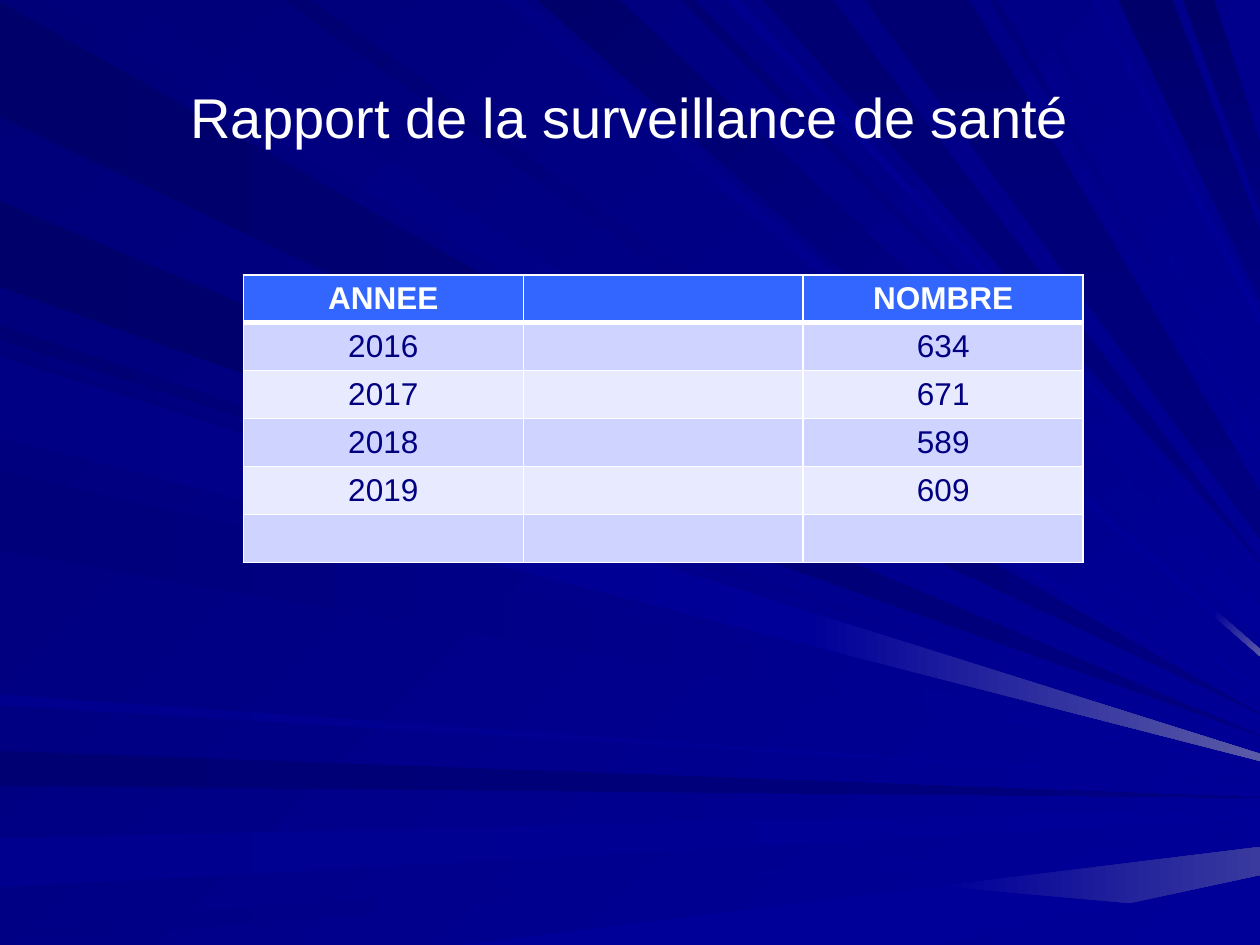
from typing import NamedTuple

from pptx import Presentation
from pptx.dml.color import RGBColor
from pptx.dml.fill import FillFormat
from pptx.enum.text import MSO_ANCHOR, PP_ALIGN
from pptx.oxml import parse_xml
from pptx.oxml.ns import nsdecls
from pptx.slide import Slide
from pptx.util import Pt

FONT = "Arial"
WIDTH, HEIGHT = 720, 540
COLORS = {
    "white": "FFFFFF", "text": "000080", "header": "3366FF",
    "odd": "CED3FF", "even": "E8EAFF", "background": "000078",
    "navy": "000080", "blue": "000099", "glint": "5A5AA6", "soft glint": "39399E",
    "ink": "00006B", "dusk": "000073", "deep": "00007B", "mid": "000085", "bright": "00008E",
}
ROWS = [
    ("ANNEE", "", "NOMBRE"),
    ("2016", "", "634"),
    ("2017", "", "671"),
    ("2018", "", "589"),
    ("2019", "", "609"),
    ("", "", ""),
]
COLUMN_WIDTH, ROW_HEIGHT = 160, 27.4

Point = tuple[float, float]


class Ray(NamedTuple):
    """A beam from first..last on one edge to a tip on the right edge.

    Without a tip, a beam from the left edge heads for the common focus.
    A glint recolours the part beyond the split fraction.
    """
    edge: str
    first: float
    last: float
    start: str
    end: str = "blue"
    tip: float | None = None
    spread: float = 0
    glint: str = ""
    split: float = 1


RAYS = [
    Ray("left", 1, 67, "ink", "navy"),
    Ray("top", 19, 73, "deep", tip=405),
    Ray("left", 429, 449, "dusk", "navy"),
    Ray("left", 479, 507, "bright", spread=6),
    Ray("left", 529, 540, "mid", tip=477),
    Ray("bottom", 262, 534, "blue", tip=484, spread=16, glint="soft glint", split=0.6),
    Ray("left", 186, 194, "dusk"),
    Ray("left", 115, 164, "ink", "navy"),
    Ray("top", 287, 300, "mid", tip=375, spread=-4, glint="glint", split=0.94),
    Ray("top", 307, 354, "ink", tip=365, spread=-20),
    Ray("top", 389, 397, "dusk", tip=333),
    Ray("top", 436, 476, "dusk", "navy", tip=321),
    Ray("top", 639, 670, "ink", "navy", tip=171, spread=-39),
    Ray("top", 676, 694, "ink", "navy", tip=120, spread=-38),
    Ray("left", 200, 246, "deep", spread=4),
    Ray("left", 269, 315, "deep"),
    Ray("left", 397, 403, "bright", tip=447),
    Ray("top", 162, 178, "dusk", tip=397, spread=-4),
    Ray("top", 415, 423, "bright", tip=326),
    Ray("top", 494, 554, "dusk", "navy", tip=308, spread=-27),
    Ray("top", 565, 570, "deep", tip=259, spread=-4),
    Ray("top", 587, 593, "mid", tip=242),
    Ray("top", 623, 628, "bright", tip=186, spread=-7),
    Ray("left", 204, 250, "mid", spread=4, glint="glint", split=0.64),
]


def rgb(name: str) -> RGBColor:
    return RGBColor.from_string(COLORS[name])


def shade(fill: FillFormat, start: str, end: str, angle: int) -> None:
    """Fill solid when both colours agree, else with a clockwise linear gradient."""
    if start == end:
        fill.solid()
        fill.fore_color.rgb = rgb(start)
        return
    fill.gradient()
    fill.gradient_angle = (360 - angle) % 360
    for position, (stop, color) in enumerate(zip(fill.gradient_stops, (start, end))):
        stop.color.rgb = rgb(color)
        stop.position = position


def between(base: Point, tip: Point, fraction: float) -> Point:
    return tuple(a + (b - a) * fraction for a, b in zip(base, tip))


def draw_polygon(page: Slide, corners: list[Point], start: str, end: str, angle: int) -> None:
    first, *others = [(Pt(x), Pt(y)) for x, y in corners]
    builder = page.shapes.build_freeform(*first)
    builder.add_line_segments(others, close=True)
    shape = builder.convert_to_shape()
    shape.shadow.inherit = False
    shape.line.fill.background()
    shade(shape.fill, start, end, angle)


def draw_ray(page: Slide, ray: Ray) -> None:
    positions = (ray.first, ray.last)
    tip = 404 + 0.118 * sum(positions) / 2 if ray.tip is None else ray.tip
    tips = [(WIDTH, tip), (WIDTH, tip + ray.spread)]
    if ray.edge == "left":
        bases = [(0, position) for position in positions]
    else:
        bases = [(position, 0 if ray.edge == "top" else HEIGHT) for position in positions]
    angle = 0 if ray.edge != "top" else 90 if ray.end == "navy" else 45
    middles = [between(base, end, ray.split) for base, end in zip(bases, tips)]
    draw_polygon(page, bases + middles[::-1], ray.start, ray.end, angle)
    if ray.glint:
        draw_polygon(page, middles + tips[::-1], ray.end, ray.glint, angle)


def style_text(para, size: float, color: str, bold: bool = False) -> None:
    para.alignment = PP_ALIGN.CENTER
    para.font.name = FONT
    para.font.size = Pt(size)
    para.font.bold = bold
    para.font.color.rgb = rgb(color)


def add_borders(cell, top: float, bottom: float) -> None:
    for side, width in (("L", 1), ("R", 1), ("T", top), ("B", bottom)):
        cell._tc.get_or_add_tcPr().append(parse_xml(
            f'<a:ln{side} {nsdecls("a")} w="{Pt(width)}"><a:solidFill>'
            f'<a:srgbClr val="{COLORS["white"]}"/></a:solidFill></a:ln{side}>'))


def draw_table(page: Slide) -> None:
    columns = len(ROWS[0])
    table = page.shapes.add_table(
        len(ROWS), columns, Pt(139), Pt(157),
        Pt(COLUMN_WIDTH * columns), Pt(ROW_HEIGHT * len(ROWS))).table
    for column in table.columns:
        column.width = Pt(COLUMN_WIDTH)
    for index, values in enumerate(ROWS):
        table.rows[index].height = Pt(ROW_HEIGHT)
        is_header = index == 0
        fill = "header" if is_header else "odd" if index % 2 else "even"
        for column, value in enumerate(values):
            cell = table.cell(index, column)
            add_borders(cell, 3 if index == 1 else 1, 3 if is_header else 1)
            cell.fill.solid()
            cell.fill.fore_color.rgb = rgb(fill)
            cell.text = value
            style_text(cell.text_frame.paragraphs[0], 18,
                       "white" if is_header else "text", is_header)


def draw_title(page: Slide) -> None:
    title = page.shapes.title
    title.left, title.top, title.width, title.height = Pt(36), Pt(21.6), Pt(648), Pt(90)
    title.text_frame.text = "Rapport de la surveillance de santé"
    title.text_frame.vertical_anchor = MSO_ANCHOR.MIDDLE
    style_text(title.text_frame.paragraphs[0], 32, "white")
    page.shapes._spTree.append(title._element)  # bring in front of the rays


def main() -> None:
    deck = Presentation()
    deck.slide_width, deck.slide_height = Pt(WIDTH), Pt(HEIGHT)
    page = deck.slides.add_slide(deck.slide_layouts[5])
    shade(page.background.fill, "background", "blue", 45)
    for ray in RAYS:
        draw_ray(page, ray)
    draw_title(page)
    draw_table(page)
    deck.save("out.pptx")


if __name__ == "__main__":
    main()
